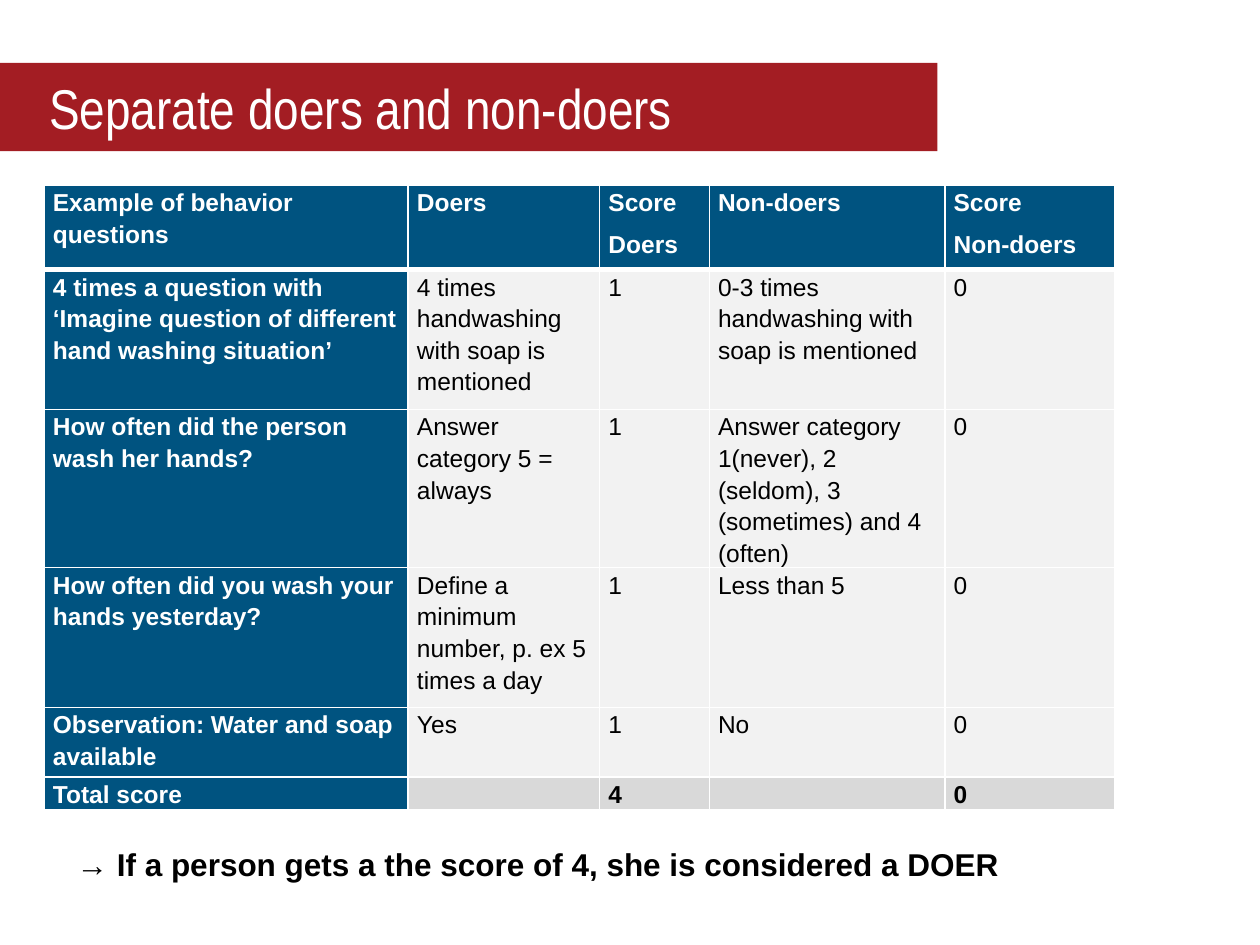
from lxml.etree import SubElement
from pptx import Presentation
from pptx.dml.color import RGBColor
from pptx.enum.shapes import MSO_SHAPE
from pptx.enum.text import MSO_ANCHOR, MSO_AUTO_SIZE, PP_ALIGN
from pptx.oxml.ns import qn
from pptx.util import Inches, Pt

COLORS = {"red": "A31D23", "blue": "005380", "light": "F2F2F2",
          "grey": "D9D9D9", "white": "FFFFFF", "black": "000000"}
TITLE = "Separate doers and non-doers"
CONCLUSION = "→ If a person gets a the score of 4, she is considered a DOER"
ROWS = [
    ["Example of behavior questions", "Doers", "Score\nDoers", "Non-doers", "Score\nNon-doers"],
    ["4 times a question with ‘Imagine question of different hand washing situation’",
     "4 times handwashing with soap is mentioned", "1",
     "0-3 times handwashing with soap is mentioned", "0"],
    ["How often did the person wash her hands?", "Answer category 5 = always", "1",
     "Answer category 1(never), 2 (seldom), 3 (sometimes) and 4 (often)", "0"],
    ["How often did you wash your hands yesterday?",
     "Define a minimum number, p. ex 5 times a day", "1", "Less than 5", "0"],
    ["Observation: Water and soap available", "Yes", "1", "No", "0"],
    ["Total score", "", "4", "", "0"],
]
COL_WIDTHS = [2.89, 1.52, 0.87, 1.87, 1.35]
ROW_HEIGHTS = [0.67, 1.11, 1.11, 1.11, 0.55, 0.26]
CELL_SIZE = 14


def rgb(name):
    return RGBColor.from_string(COLORS[name])


def add_run(p, text, size, color, bold=False, font="Arial"):
    r = p.add_run()
    r.text = text
    r.font.name, r.font.size, r.font.bold = font, Pt(size), bold
    r.font.color.rgb = rgb(color)


def add_borders(cell, widths):
    """Draw white borders; widths maps an edge letter (L, R, T, B) to points."""
    props = cell._tc.get_or_add_tcPr()
    for edge, width in widths.items():
        line = SubElement(props, qn(f"a:ln{edge}"), w=str(Pt(width)))
        fill = SubElement(line, qn("a:solidFill"))
        SubElement(fill, qn("a:srgbClr"), val=COLORS["white"])


def add_title(slide):
    sp = slide.shapes.add_shape(MSO_SHAPE.RECTANGLE, 0, Inches(0.5), Inches(7.44), Inches(0.7))
    sp.shadow.inherit = False
    sp.fill.solid()
    sp.fill.fore_color.rgb = rgb("red")
    sp.line.fill.background()
    tf = sp.text_frame
    tf.word_wrap = True
    tf.vertical_anchor = MSO_ANCHOR.MIDDLE
    tf.margin_left = tf.margin_right = Inches(0.39)
    p = tf.paragraphs[0]
    p.alignment = PP_ALIGN.LEFT
    add_run(p, TITLE, 32, "white", font="Arial Narrow")


def fill_cell(cell, text, row, col):
    header, total = row == 0, row == len(ROWS) - 1
    heading = header or col == 0
    add_borders(cell, {"L": 1, "R": 1, "T": 3 if row == 1 else 1, "B": 3 if header else 1})
    cell.fill.solid()
    cell.fill.fore_color.rgb = rgb("blue" if heading else "grey" if total else "light")
    cell.margin_left = cell.margin_right = Inches(0.07)
    cell.margin_top = cell.margin_bottom = 0
    tf = cell.text_frame
    for i, line in enumerate(text.split("\n")):
        p = tf.add_paragraph() if i else tf.paragraphs[0]
        p.line_spacing, p.space_after = 1.15, Pt(3)
        p.space_before = Pt(3 if i else 0)
        if line:
            add_run(p, line, CELL_SIZE, "white" if heading else "black", heading or total)
        else:
            SubElement(p._p, qn("a:endParaRPr"), sz=str(CELL_SIZE * 100))


def add_score_table(slide):
    table = slide.shapes.add_table(
        len(ROWS), len(COL_WIDTHS), Inches(0.35), Inches(1.47),
        Inches(sum(COL_WIDTHS)), Inches(sum(ROW_HEIGHTS))).table
    table.first_col = True
    table.horz_banding = False
    for column, width in zip(table.columns, COL_WIDTHS):
        column.width = Inches(width)
    for r, (values, height) in enumerate(zip(ROWS, ROW_HEIGHTS)):
        table.rows[r].height = Inches(height)
        for c, text in enumerate(values):
            fill_cell(table.cell(r, c), text, r, c)


def add_conclusion(slide):
    box = slide.shapes.add_textbox(Inches(0.51), Inches(6.66), Inches(8.5), Inches(0.4))
    tf = box.text_frame
    tf.word_wrap = True
    tf.auto_size = MSO_AUTO_SIZE.SHAPE_TO_FIT_TEXT
    add_run(tf.paragraphs[0], CONCLUSION, 18, "black", bold=True)


def main():
    prs = Presentation()
    prs.slide_width, prs.slide_height = Inches(10), Inches(7.5)
    slide = prs.slides.add_slide(prs.slide_layouts[6])
    add_title(slide)
    add_score_table(slide)
    add_conclusion(slide)
    prs.save("out.pptx")


if __name__ == "__main__":
    main()
